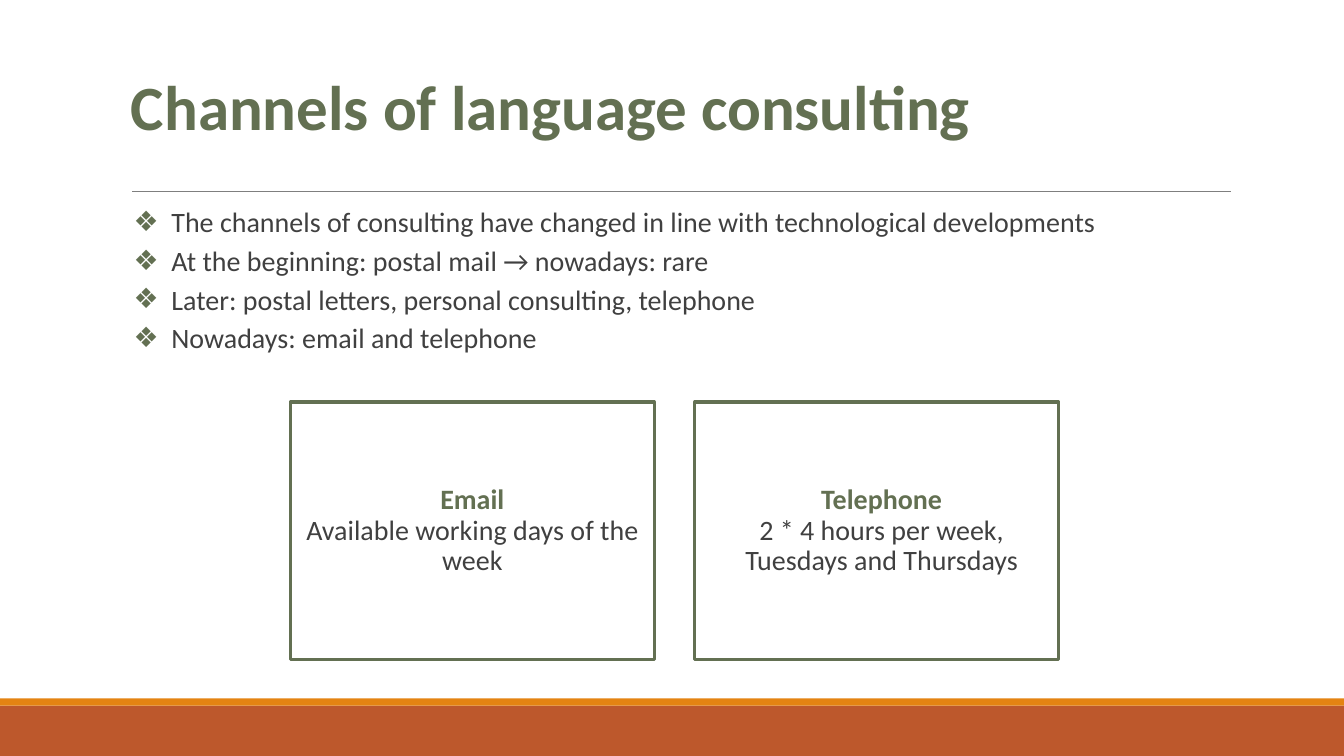
from dataclasses import dataclass

from lxml.etree import SubElement
from pptx import Presentation
from pptx.dml.color import RGBColor
from pptx.enum.shapes import MSO_CONNECTOR, MSO_SHAPE
from pptx.enum.text import MSO_ANCHOR, MSO_AUTO_SIZE, PP_ALIGN
from pptx.oxml.ns import qn
from pptx.shapes.autoshape import Shape
from pptx.slide import Slide
from pptx.text.text import TextFrame, _Paragraph
from pptx.util import Cm, Pt

GREEN = RGBColor(0x63, 0x70, 0x52)
DARK_GRAY = RGBColor(0x40, 0x40, 0x40)
RULE_GRAY = RGBColor(0x7F, 0x7F, 0x7F)
RUST = RGBColor(0xBD, 0x58, 0x2C)
ORANGE = RGBColor(0xE4, 0x83, 0x12)
WHITE = RGBColor(0xFF, 0xFF, 0xFF)
FONT = "Calibri"
SLIDE_WIDTH, SLIDE_HEIGHT = 33.87, 19.05
CONTENT_LEFT, CONTENT_WIDTH = 3.05, 27.94
CARD_LEFT, CARD_TOP, CARD_WIDTH, CARD_HEIGHT = 7.32, 10.13, 9.17, 6.5
CARD_PITCH = 10.19


@dataclass(frozen=True)
class Band:
    top: float
    height: float
    color: RGBColor


@dataclass(frozen=True)
class Channel:
    heading: str
    availability: str
    indent: float


BANDS = [Band(17.78, 1.27, RUST), Band(17.6, 0.18, ORANGE)]
HISTORY = [
    "The channels of consulting have changed in line with technological developments",
    "At the beginning: postal mail → nowadays: rare",
    "Later: postal letters, personal consulting, telephone",
    "Nowadays: email and telephone",
]
CHANNELS = [
    Channel("Email", "Available working days of the week", 0),
    Channel("Telephone", "2 * 4 hours per week, Tuesdays and Thursdays", 0.25),
]


def format_paragraph(paragraph: _Paragraph, size: float, color: RGBColor,
                     bold: bool = False, spacing: float = 0.9) -> None:
    paragraph.line_spacing = spacing
    for run in paragraph.runs:
        run.font.name = FONT
        run.font.size = Pt(size)
        run.font.bold = bold
        run.font.color.rgb = color


def set_margins(frame: TextFrame, horizontal: float, vertical: float) -> None:
    frame.margin_left = frame.margin_right = Cm(horizontal)
    frame.margin_top = frame.margin_bottom = Cm(vertical)


def add_bullet(paragraph: _Paragraph) -> None:
    properties = paragraph._p.get_or_add_pPr()
    properties.set("marL", str(Cm(1.27)))
    properties.set("indent", str(Cm(-0.95)))
    bullet_color = SubElement(properties, qn("a:buClr"))
    SubElement(bullet_color, qn("a:srgbClr"), val=str(GREEN))
    SubElement(properties, qn("a:buFont"), typeface=FONT)
    SubElement(properties, qn("a:buChar"), char="❖")


def add_rectangle(slide: Slide, left: float, top: float, width: float,
                  height: float, color: RGBColor) -> Shape:
    rectangle = slide.shapes.add_shape(
        MSO_SHAPE.RECTANGLE, Cm(left), Cm(top), Cm(width), Cm(height))
    rectangle.shadow.inherit = False
    rectangle.fill.solid()
    rectangle.fill.fore_color.rgb = color
    rectangle.line.fill.background()
    return rectangle


def add_rule(slide: Slide) -> None:
    rule = slide.shapes.add_connector(
        MSO_CONNECTOR.STRAIGHT, Cm(3.33), Cm(4.83), Cm(31.01), Cm(4.83))
    rule.line.color.rgb = RULE_GRAY
    rule.line.width = Pt(0.75)
    SubElement(rule._element.spPr, qn("a:effectLst"))


def set_title(slide: Slide) -> None:
    title = slide.shapes.title
    title.left, title.top = Cm(CONTENT_LEFT), Cm(0.79)
    title.width, title.height = Cm(CONTENT_WIDTH), Cm(4.04)
    frame = title.text_frame
    frame.text = "Channels of language consulting"
    frame.word_wrap = True
    frame.auto_size = MSO_AUTO_SIZE.NONE
    frame.vertical_anchor = MSO_ANCHOR.MIDDLE
    set_margins(frame, 0.25, 0.13)
    frame.paragraphs[0].alignment = PP_ALIGN.LEFT
    format_paragraph(frame.paragraphs[0], 45, GREEN, True, 0.85)


def add_history(slide: Slide) -> None:
    history = slide.shapes.add_textbox(
        Cm(CONTENT_LEFT), Cm(5.13), Cm(CONTENT_WIDTH), Cm(11.18))
    frame = history.text_frame
    frame.word_wrap = True
    set_margins(frame, 0, 0.13)
    frame.text = "\n".join(HISTORY)
    for paragraph in frame.paragraphs:
        format_paragraph(paragraph, 20, DARK_GRAY)
        paragraph.space_before = Pt(6)
        add_bullet(paragraph)


def add_channel(slide: Slide, channel: Channel, left: float) -> None:
    card = add_rectangle(slide, left, CARD_TOP, CARD_WIDTH, CARD_HEIGHT, WHITE)
    card.line.color.rgb = GREEN
    card.line.width = Pt(2.25)
    frame = card.text_frame
    frame.word_wrap = True
    frame.vertical_anchor = MSO_ANCHOR.MIDDLE
    set_margins(frame, 0.25, 0.25)
    frame.text = f"{channel.heading}\n{channel.availability}"
    heading, availability = frame.paragraphs
    format_paragraph(heading, 20, GREEN, True)
    format_paragraph(availability, 20, DARK_GRAY)
    for paragraph in frame.paragraphs:
        paragraph.alignment = PP_ALIGN.CENTER
        paragraph._p.get_or_add_pPr().set("marL", str(Cm(channel.indent)))


def main() -> None:
    presentation = Presentation()
    presentation.slide_width = Cm(SLIDE_WIDTH)
    presentation.slide_height = Cm(SLIDE_HEIGHT)
    slide = presentation.slides.add_slide(presentation.slide_layouts[5])
    for band in BANDS:
        add_rectangle(slide, 0, band.top, SLIDE_WIDTH, band.height, band.color)
    add_rule(slide)
    set_title(slide)
    add_history(slide)
    for position, channel in enumerate(CHANNELS):
        add_channel(slide, channel, CARD_LEFT + position * CARD_PITCH)
    presentation.save("out.pptx")


if __name__ == "__main__":
    main()
